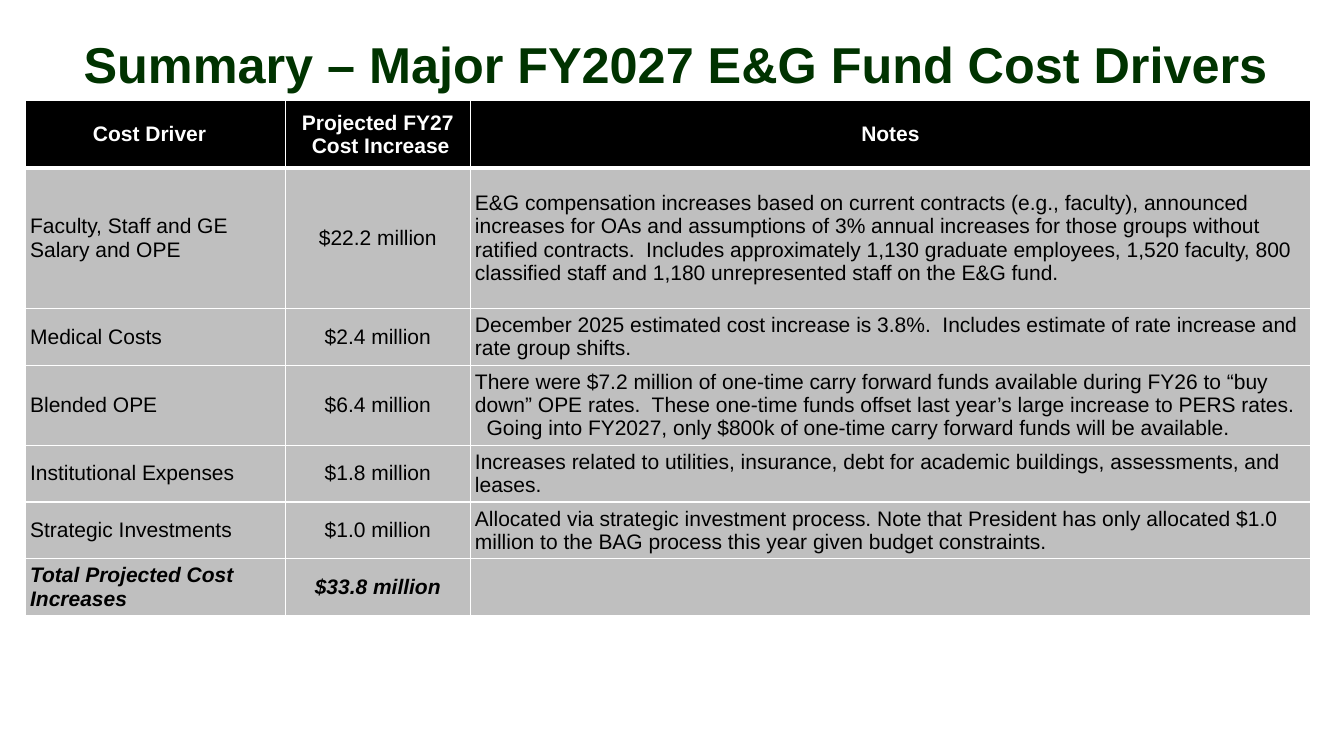
"""Build a slide with a table of the major cost drivers of a fund."""
from pptx import Presentation, util as u
from pptx.dml.color import RGBColor
from pptx.enum import text
from pptx.oxml import parse_xml
from pptx.oxml.ns import nsdecls

GREEN = RGBColor(0x00, 0x33, 0x00)
BLACK = RGBColor(0x00, 0x00, 0x00)
GREY = RGBColor(0xBF, 0xBF, 0xBF)
WHITE = RGBColor(0xFF, 0xFF, 0xFF)
FONT = "Arial"
LEFT = text.PP_ALIGN.LEFT
CENTER = text.PP_ALIGN.CENTER

COLUMN_WIDTHS = (6.55, 4.66, 21.18)
ROW_HEIGHTS = (1.7, 3.53, 1.43, 2.02, 1.43, 1.43, 1.43)
HEADER = ("Cost Driver  ", "Projected FY27\n Cost Increase", "Notes")
COST_DRIVERS = (
    ("Faculty, Staff and GE Salary and OPE", "$22.2 million",
     "E&G compensation increases based on current contracts (e.g., faculty), "
     "announced increases for OAs and assumptions of 3% annual increases for "
     "those groups without ratified contracts.  Includes approximately 1,130 "
     "graduate employees, 1,520 faculty, 800 classified staff and 1,180 "
     "unrepresented staff on the E&G fund."),
    ("Medical Costs", "$2.4 million",
     "December 2025 estimated cost increase is 3.8%.  Includes estimate of "
     "rate increase and rate group shifts."),
    ("Blended OPE", "$6.4 million",
     "There were $7.2 million of one-time carry forward funds available during "
     "FY26 to “buy down” OPE rates.  These one-time funds offset last year’s "
     "large increase to PERS rates.    Going into FY2027, only $800k of "
     "one-time carry forward funds will be available."),
    ("Institutional Expenses", "$1.8 million",
     "Increases related to utilities, insurance, debt for academic buildings, "
     "assessments, and leases."),
    ("Strategic Investments", "$1.0 million",
     "Allocated via strategic investment process. Note that President has only "
     "allocated $1.0 million to the BAG process this year given budget "
     "constraints."),
)
TOTAL = ("Total Projected Cost Increases", "$33.8 million", "")


def write(frame, content, size, color, alignment, bold=False, italic=False):
    """Write each line of the content as a paragraph with one run."""
    for index, line in enumerate(content.split("\n")):
        paragraph = frame.add_paragraph() if index else frame.paragraphs[0]
        paragraph.alignment = alignment
        run = paragraph.add_run()
        run.text = line
        font = run.font
        font.name, font.size, font.color.rgb = FONT, u.Pt(size), color
        font.bold, font.italic = bold, italic


def add_title(slide, content):
    """Place and format the title placeholder."""
    title = slide.shapes.title
    title.left, title.top = u.Cm(0.84), u.Cm(0.43)
    title.width, title.height = u.Cm(32.39), u.Cm(2.31)
    title.text_frame.vertical_anchor = text.MSO_ANCHOR.MIDDLE
    write(title.text_frame, content, 36, GREEN, CENTER, bold=True)


def format_cell(cell, fill, margins, bottom_width):
    """Set margins, anchor, white borders and fill of a cell."""
    horizontal, vertical = margins
    cell.margin_left = cell.margin_right = u.Cm(horizontal)
    cell.margin_top = cell.margin_bottom = u.Cm(vertical)
    cell.vertical_anchor = text.MSO_ANCHOR.MIDDLE
    properties = cell._tc.get_or_add_tcPr()
    for side, width in (("L", 1), ("R", 1), ("T", 1), ("B", bottom_width)):
        properties.append(parse_xml(
            f'<a:ln{side} {nsdecls("a")} w="{u.Pt(width)}"><a:solidFill>'
            f'<a:srgbClr val="{WHITE}"/></a:solidFill></a:ln{side}>'))
    cell.fill.solid()
    cell.fill.fore_color.rgb = fill


def add_cost_table(slide):
    """Add the table with its header, cost drivers and total."""
    rows = (HEADER, *COST_DRIVERS, TOTAL)
    table = slide.shapes.add_table(
        len(rows), len(HEADER), u.Cm(0.64), u.Cm(2.54),
        u.Cm(sum(COLUMN_WIDTHS)), u.Cm(sum(ROW_HEIGHTS))).table
    table.horz_banding = False
    for column, width in zip(table.columns, COLUMN_WIDTHS):
        column.width = u.Cm(width)
    for row, height, contents in zip(table.rows, ROW_HEIGHTS, rows):
        row.height = u.Cm(height)
        is_header, is_total = contents is HEADER, contents is TOTAL
        for cell, content, alignment in zip(row.cells, contents, (LEFT, CENTER, LEFT)):
            if is_header:
                format_cell(cell, BLACK, (0.18, 0.1), 3)
                write(cell.text_frame, content, 15, WHITE, CENTER, bold=True)
                continue
            format_cell(cell, GREY, (0.12, 0.12), 1)
            if content:
                write(cell.text_frame, content, 15, BLACK, alignment, is_total, is_total)


def main():
    """Create and save the presentation."""
    presentation = Presentation()
    presentation.slide_width, presentation.slide_height = u.Cm(33.87), u.Cm(19.05)
    slide = presentation.slides.add_slide(presentation.slide_layouts[5])
    add_cost_table(slide)
    add_title(slide, "Summary – Major FY2027 E&G Fund Cost Drivers")
    presentation.save("out.pptx")


if __name__ == "__main__":
    main()
